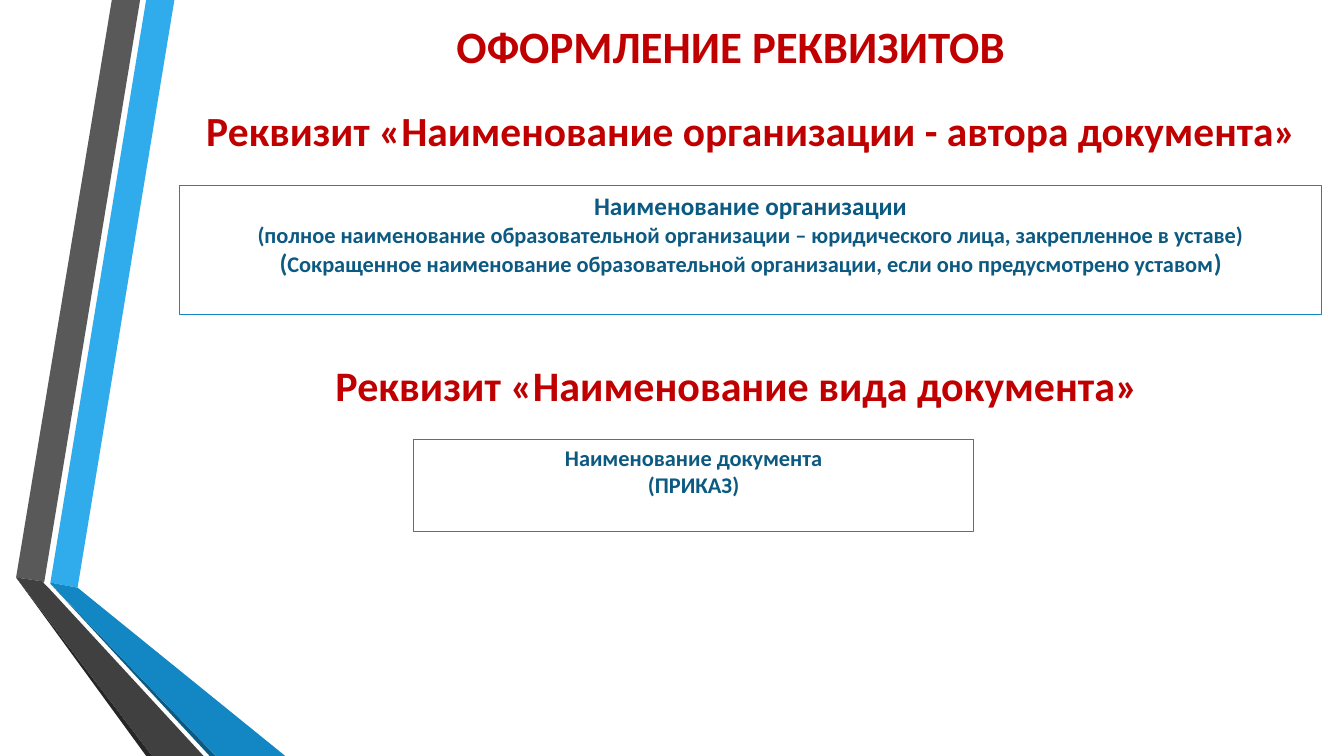
from dataclasses import dataclass

from pptx import Presentation
from pptx.dml.color import RGBColor
from pptx.enum.shapes import MSO_SHAPE
from pptx.enum.text import MSO_ANCHOR, PP_ALIGN
from pptx.util import Emu, Pt

PX = 9144  # EMU per px, 100 px to the inch
FONT = "Calibri"
COLORS = {
    "heading": "C00000",
    "body": "0C5A82",
    "frame": "1287C3",
    "sky": "30ACEC",
    "blue": "1287C3",
    "navy": "0C5A82",
    "gray": "595959",
    "charcoal": "404040",
    "black": "262626",
}


@dataclass
class Ribbon:
    color: str
    points: list[tuple[int, int]]


@dataclass
class Span:
    text: str
    size: float


@dataclass
class TextBlock:
    left: int
    top: int
    width: int
    height: int
    lines: list[list[Span]]


RIBBONS = [
    Ribbon("sky", [(50, 578), (77, 583), (173, 0), (145, 0)]),
    Ribbon("gray", [(139, 0), (111, 0), (16, 573), (44, 577)]),
    Ribbon("black", [(16, 573), (145, 750), (151, 750)]),
    Ribbon("navy", [(50, 579), (208, 750), (214, 750)]),
    Ribbon("blue", [(50, 578), (50, 579), (214, 750), (283, 750), (77, 583)]),
    Ribbon("charcoal", [(202, 750), (48, 583), (43, 578), (44, 577), (16, 573), (151, 750)]),
]

HEADINGS = [
    TextBlock(177, 0, 1096, 91, [[Span("ОФОРМЛЕНИЕ РЕКВИЗИТОВ", 32)]]),
    TextBlock(159, 83, 1174, 91,
              [[Span("Реквизит «Наименование организации - автора документа»", 29.6)]]),
    TextBlock(144, 336, 1174, 91, [[Span("Реквизит «Наименование вида документа»", 30)]]),
]

FRAMES = [
    TextBlock(178, 184, 1133, 128, [
        [Span("Наименование организации", 18)],
        [Span("(полное наименование образовательной организации – "
              "юридического лица, закрепленное в уставе)", 16)],
        [Span("(", 18),
         Span("Сокращенное наименование образовательной организации, "
              "если оно предусмотрено уставом", 16),
         Span(")", 18)],
    ]),
    TextBlock(410, 436, 556, 91, [
        [Span("Наименование документа", 16)],
        [Span("(ПРИКАЗ)", 16)],
    ]),
]


def rgb(name: str) -> RGBColor:
    return RGBColor.from_string(COLORS[name])


def bounds(block: TextBlock) -> list[Emu]:
    return [Emu(value * PX) for value in (block.left, block.top, block.width, block.height)]


def draw_ribbon(page, ribbon: Ribbon) -> None:
    start, *rest = ribbon.points
    builder = page.shapes.build_freeform(*start, scale=PX)
    builder.add_line_segments(rest, close=True)
    shape = builder.convert_to_shape()
    shape.shadow.inherit = False
    shape.fill.solid()
    shape.fill.fore_color.rgb = rgb(ribbon.color)
    shape.line.fill.background()


def write_lines(box, lines: list[list[Span]], color: str, anchor: MSO_ANCHOR) -> None:
    frame = box.text_frame
    frame.word_wrap = True
    frame.vertical_anchor = anchor
    for index, spans in enumerate(lines):
        para = frame.add_paragraph() if index else frame.paragraphs[0]
        para.alignment = PP_ALIGN.CENTER
        for span in spans:
            run = para.add_run()
            run.text = span.text
            run.font.name = FONT
            run.font.size = Pt(span.size)
            run.font.bold = True
            run.font.color.rgb = rgb(color)


def draw_heading(page, block: TextBlock) -> None:
    box = page.shapes.add_textbox(*bounds(block))
    write_lines(box, block.lines, "heading", MSO_ANCHOR.MIDDLE)


def draw_frame(page, block: TextBlock) -> None:
    box = page.shapes.add_shape(MSO_SHAPE.RECTANGLE, *bounds(block))
    box.shadow.inherit = False
    box.fill.background()
    box.line.color.rgb = rgb("frame")
    box.line.width = Pt(0.75)
    write_lines(box, block.lines, "body", MSO_ANCHOR.TOP)


def main() -> None:
    deck = Presentation()
    deck.slide_width = Emu(1333 * PX)
    deck.slide_height = Emu(750 * PX)
    page = deck.slides.add_slide(deck.slide_layouts[6])

    # Folded ribbons on the left
    for ribbon in RIBBONS:
        draw_ribbon(page, ribbon)

    # Headings and framed samples
    for heading in HEADINGS:
        draw_heading(page, heading)
    for sample in FRAMES:
        draw_frame(page, sample)

    deck.save("out.pptx")


if __name__ == "__main__":
    main()
